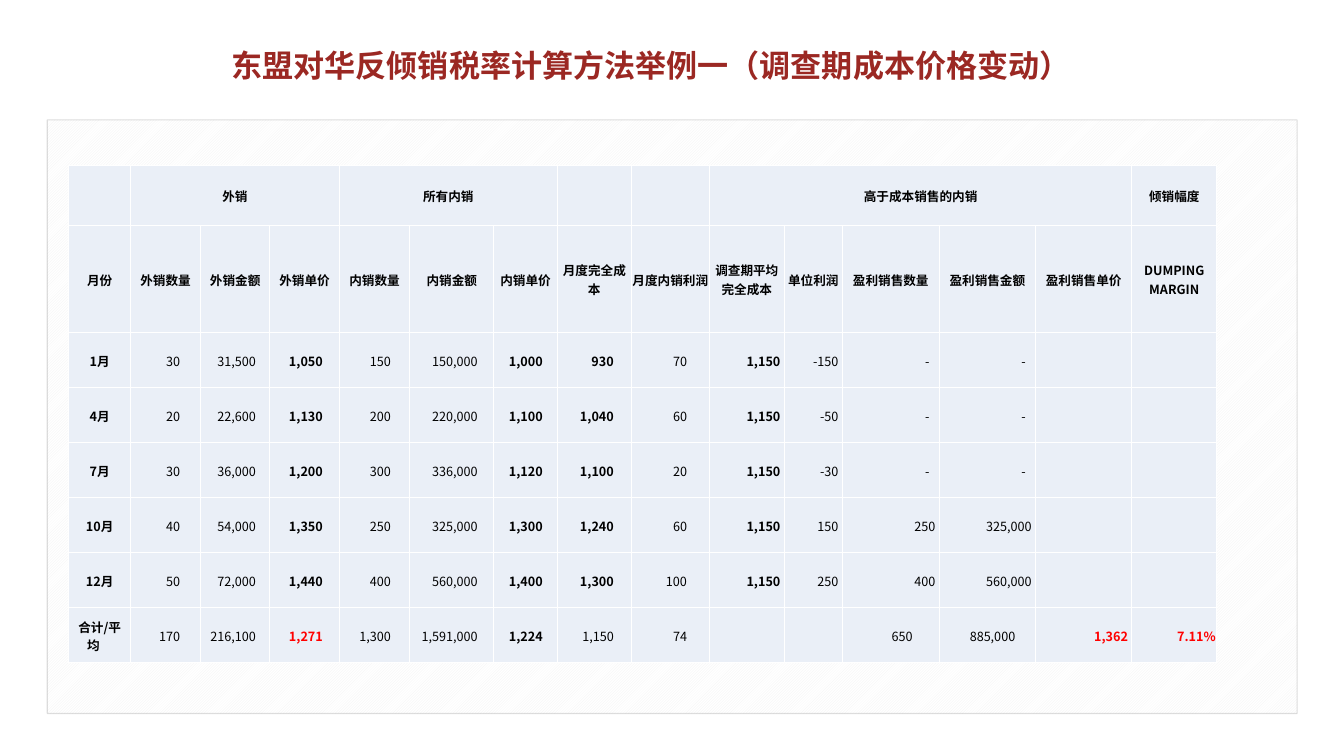
from lxml.etree import SubElement
from pptx import Presentation
from pptx.dml.color import RGBColor
from pptx.enum.dml import MSO_PATTERN
from pptx.enum.shapes import MSO_SHAPE
from pptx.enum.text import MSO_ANCHOR, PP_ALIGN
from pptx.oxml.ns import qn
from pptx.util import Pt

TITLE = "东盟对华反倾销税率计算方法举例一（调查期成本价格变动）"
GROUPS = [(1, 3, "外销"), (4, 6, "所有内销"), (8 + 1, 13, "高于成本销售的内销"), (14, 14, "倾销幅度")]
HEADINGS = (
    "月份", "外销数量", "外销金额", "外销单价", "内销数量", "内销金额", "内销单价", "月度完全成本",
    "月度内销利润", "调查期平均完全成本", "单位利润", "盈利销售数量", "盈利销售金额", "盈利销售单价",
    "DUMPING MARGIN",
)
MONTHS = [
    ("1月", "30", "31,500", "1,050", "150", "150,000", "1,000", "930", "70", "1,150", "-150", "-", "-", "", ""),
    ("4月", "20", "22,600", "1,130", "200", "220,000", "1,100", "1,040", "60", "1,150", "-50", "-", "-", "", ""),
    ("7月", "30", "36,000", "1,200", "300", "336,000", "1,120", "1,100", "20", "1,150", "-30", "-", "-", "", ""),
    ("10月", "40", "54,000", "1,350", "250", "325,000", "1,300", "1,240", "60", "1,150", "150", "250", "325,000", "", ""),
    ("12月", "50", "72,000", "1,440", "400", "560,000", "1,400", "1,300", "100", "1,150", "250", "400", "560,000", "", ""),
]
TOTALS = ("合计/平均　", "170", "216,100", "1,271", "1,300", "1,591,000", "1,224", "1,150", "74", "", "",
          "650", "885,000", "1,362", "7.11%")

COLORS = {"title": "9B2823", "cell": "EAEFF7", "white": "FFFFFF", "hatch": "F2F2F2",
          "frame": "595959", "text": "000000", "result": "FF0000"}
FONT = "Noto Sans CJK SC"
COLUMN_WIDTHS = (44, 50, 49.6, 49.6, 50.4, 60, 45.4, 52.8, 55.8, 53.5, 41.5, 69.2, 68.8, 68.8, 60.6)
ROW_HEIGHTS = [42.8, 76.6] + [39.3] * 6
NUMBER_INSETS = (0.7, 14.6, 10, 11.8, 13.6, 11.6, 10.5, 12.5, 16, 2.8, 2.8, 2.8, 2.8, 2.8, 0.7)
TOTAL_INSETS = {11: 19, 12: 14.5}
DASH_INSET = 7
BOLD_COLUMNS = {0, 3, 6, 7, 9, 13, 14}
RESULT_COLUMNS = {3, 13, 14}
TOTAL_ROW = len(ROW_HEIGHTS) - 1


def color(name):
    return RGBColor.from_string(COLORS[name])


def style_paragraph(paragraph, size, color_name, bold, alignment):
    paragraph.alignment = alignment
    font = paragraph.font
    font.name, font.size, font.bold = FONT, Pt(size), bold
    font.color.rgb = color(color_name)
    SubElement(font._element, qn("a:ea"), typeface=FONT)


def add_frame(slide):
    frame = slide.shapes.add_shape(MSO_SHAPE.RECTANGLE, Pt(33.8), Pt(85.7), Pt(892.8), Pt(424))
    frame.shadow.inherit = False
    frame.fill.patterned()
    frame.fill.pattern = MSO_PATTERN.LIGHT_UPWARD_DIAGONAL
    frame.fill.fore_color.rgb = color("hatch")
    frame.fill.back_color.rgb = color("white")
    frame.line.width = Pt(0.75)
    frame.line.color.rgb = color("frame")
    line_color = frame.line._ln.find(".//" + qn("a:srgbClr"))
    SubElement(line_color, qn("a:alpha"), val="20000")


def format_cell(cell):
    cell.margin_left = cell.margin_right = cell.margin_top = Pt(0.7)
    cell.margin_bottom = 0
    cell.vertical_anchor = MSO_ANCHOR.MIDDLE
    properties = cell._tc.get_or_add_tcPr()
    for side in ("lnL", "lnR", "lnT", "lnB"):
        border = SubElement(properties, qn(f"a:{side}"), w=str(Pt(1)))
        fill = SubElement(border, qn("a:solidFill"))
        SubElement(fill, qn("a:srgbClr"), val=COLORS["white"])
    cell.fill.solid()
    cell.fill.fore_color.rgb = color("cell")


def write_heading(cell, text):
    cell.text = text
    style_paragraph(cell.text_frame.paragraphs[0], 9, "text", True, PP_ALIGN.CENTER)


def write_number(cell, text, row, column):
    is_total = row == TOTAL_ROW
    inset = NUMBER_INSETS[column]
    if is_total:
        inset = TOTAL_INSETS.get(column, inset)
    elif text == "-":
        inset = DASH_INSET
    cell.margin_right = Pt(inset)
    cell.text = text
    bold = column in BOLD_COLUMNS and not (is_total and column == 7)
    color_name = "result" if is_total and column in RESULT_COLUMNS else "text"
    style_paragraph(cell.text_frame.paragraphs[0], 9, color_name, bold, PP_ALIGN.RIGHT)


def add_margin_table(slide):
    table = slide.shapes.add_table(
        len(ROW_HEIGHTS), len(COLUMN_WIDTHS), Pt(49.2), Pt(118.3),
        Pt(sum(COLUMN_WIDTHS)), Pt(sum(ROW_HEIGHTS))).table
    table.first_row = table.horz_banding = False
    for column, width in zip(table.columns, COLUMN_WIDTHS):
        column.width = Pt(width)
    for row, height in zip(table.rows, ROW_HEIGHTS):
        row.height = Pt(height)
    for cell in table.iter_cells():
        format_cell(cell)
    for first, last, text in GROUPS:
        if last > first:
            table.cell(0, first).merge(table.cell(0, last))
        write_heading(table.cell(0, first), text)
    for row, values in enumerate([HEADINGS, *MONTHS, TOTALS], start=1):
        for column, text in enumerate(values):
            cell = table.cell(row, column)
            if row == 1 or column == 0:
                write_heading(cell, text)
            elif text:
                write_number(cell, text, row, column)


def add_title(slide):
    title = slide.shapes.add_textbox(Pt(149), Pt(26.6), Pt(632.2), Pt(43.2))
    title.text_frame.word_wrap = True
    title.text_frame.vertical_anchor = MSO_ANCHOR.MIDDLE
    title.text_frame.text = TITLE
    paragraph = title.text_frame.paragraphs[0]
    paragraph.line_spacing = 0.9
    style_paragraph(paragraph, 22.2, "title", True, PP_ALIGN.CENTER)


def main():
    """Build the anti-dumping margin example slide."""
    presentation = Presentation()
    presentation.slide_width, presentation.slide_height = Pt(960), Pt(540)
    slide = presentation.slides.add_slide(presentation.slide_layouts[6])
    add_frame(slide)
    add_margin_table(slide)
    add_title(slide)
    presentation.save("out.pptx")


if __name__ == "__main__":
    main()
